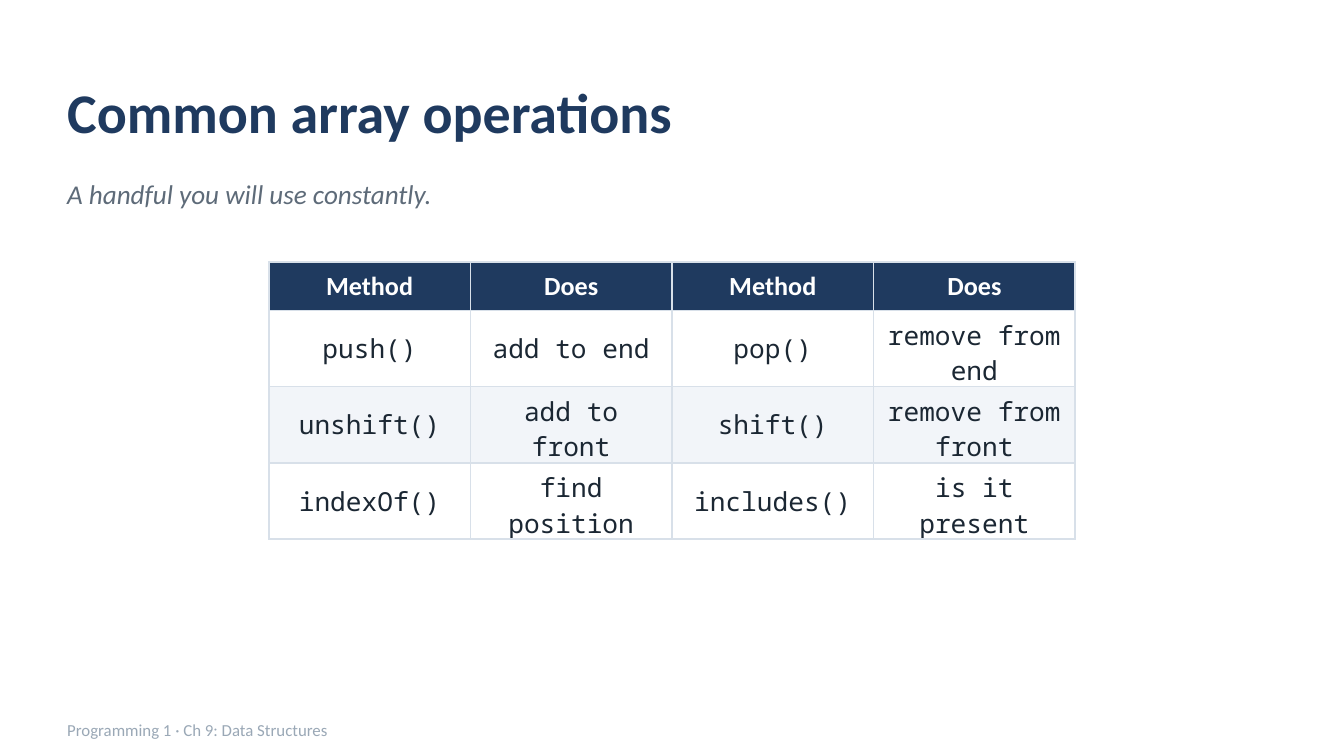
import pptx
import pptx.util
import pptx.dml.color
import pptx.enum.text
import pptx.oxml
import pptx.oxml.ns

PX = 4572  # 200 px to the inch
MID = pptx.enum.text.MSO_ANCHOR.MIDDLE
NAVY, INK, WHITE, PALE, RULE = "1F3A5F", "1B2733", "FFFFFF", "F2F5F9", "D8E0E9"


def color(code):
    return pptx.dml.color.RGBColor.from_string(code)


def style(para, face, size, code, bold=False, slant=False):
    font = para.runs[0].font
    font.name, font.size = face, pptx.util.Pt(size)
    font.bold, font.italic = bold, slant
    font.color.rgb = color(code)


deck = pptx.Presentation()
deck.slide_width, deck.slide_height = 2000 * PX, 1125 * PX
slide = deck.slides.add_slide(deck.slide_layouts[6])
slide.background.fill.solid()
slide.background.fill.fore_color.rgb = color(WHITE)

# Title, subtitle and footer: text, top, width, height, size, color, bold, italic
lines = [
    ("Common array operations", 80, 1800, 170, 30, NAVY, True, False),
    ("A handful you will use constantly.", 248, 1800, 80, 14.5, "5E6B79", False, True),
    ("Programming 1 · Ch 9: Data Structures", 1060, 1600, 52, 9, "9AA8B6", False, False),
]
for text, top, wide, high, size, code, bold, slant in lines:
    frame = slide.shapes.add_textbox(100 * PX, top * PX, wide * PX, high * PX).text_frame
    frame.margin_left = frame.margin_right = frame.margin_top = frame.margin_bottom = 0
    frame.word_wrap = True
    frame.vertical_anchor = MID
    frame.text = text
    style(frame.paragraphs[0], "Calibri", size, code, bold, slant)

# Table of methods
rows = [
    ("Method", "Does", "Method", "Does"),
    ("push()", "add to end", "pop()", "remove from end"),
    ("unshift()", "add to front", "shift()", "remove from front"),
    ("indexOf()", "find position", "includes()", "is it present"),
]
grid = slide.shapes.add_table(4, 4, 400 * PX, 390 * PX, 1200 * PX, 288 * PX)
for r, row in enumerate(rows):
    grid.table.rows[r].height = 72 * PX
    for c, text in enumerate(row):
        cell = grid.table.cell(r, c)
        cell.vertical_anchor = MID
        cell.text = text
        para = cell.text_frame.paragraphs[0]
        para.alignment = pptx.enum.text.PP_ALIGN.CENTER
        if r == 0:
            style(para, "Calibri", 14, WHITE, bold=True)
        else:
            style(para, "Noto Sans Mono", 14, INK)

        # Borders go ahead of the fill
        props = cell._tc.get_or_add_tcPr()
        for side in ("lnL", "lnR", "lnT", "lnB"):
            props.append(pptx.oxml.parse_xml(
                f'<a:{side} {pptx.oxml.ns.nsdecls("a")} w="12700"><a:solidFill>'
                f'<a:srgbClr val="{RULE}"/></a:solidFill></a:{side}>'))
        cell.fill.solid()
        cell.fill.fore_color.rgb = color(NAVY if r == 0 else PALE if r == 2 else WHITE)

# Rows grow to fit their text, past the frame
grid.height = 200 * PX

deck.save("out.pptx")
